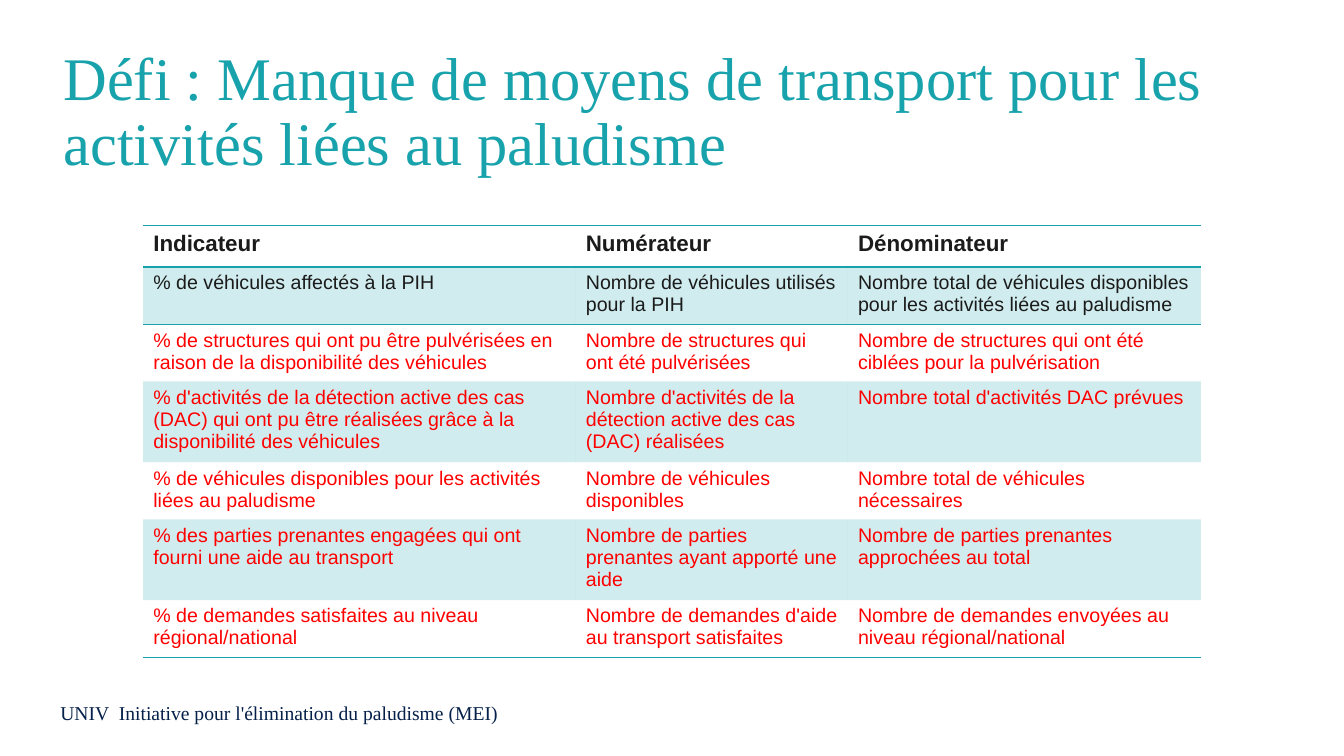
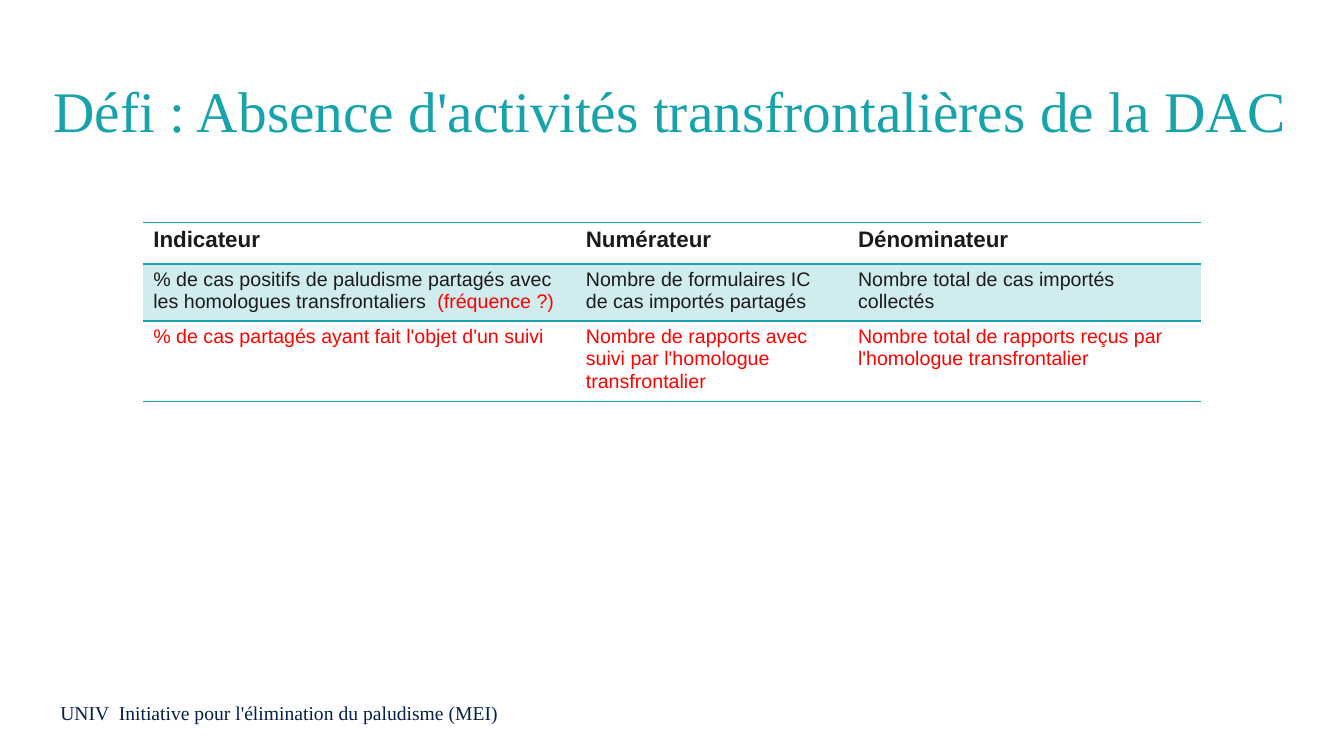
from lxml.etree import SubElement
from pptx import Presentation
from pptx.dml.color import RGBColor
from pptx.enum.text import MSO_ANCHOR, MSO_AUTO_SIZE, PP_ALIGN
from pptx.oxml import parse_xml
from pptx.oxml.ns import nsdecls, qn
from pptx.util import Cm, Pt

# Palette and fonts
TEAL = RGBColor(0x18, 0xA3, 0xAC)
NAVY = RGBColor(0x05, 0x20, 0x49)
INK = RGBColor(0x1B, 0x1B, 0x1B)
RED = RGBColor(0xFF, 0x00, 0x00)
SERIF = "Times New Roman"
SANS = "Arial"

# Shared wording and table grid
FOOTER = "UNIV  Initiative pour l'élimination du paludisme (MEI)"
HEADERS = ("Indicateur", "Numérateur", "Dénominateur")
COL_WIDTHS = (Cm(10.9), Cm(6.86), Cm(8.89))
ROW_HEIGHT = Cm(1.04)
PLAIN_TABLE = "{2D5ABB26-0587-4C30-8999-92F81FD0307C}"

TRANSPORT_ROWS = (
    ("% de véhicules affectés à la PIH",
     "Nombre de véhicules utilisés pour la PIH",
     "Nombre total de véhicules disponibles pour les activités liées au paludisme"),
    ("% de structures qui ont pu être pulvérisées en raison de la disponibilité des véhicules",
     "Nombre de structures qui ont été pulvérisées",
     "Nombre de structures qui ont été ciblées pour la pulvérisation"),
    ("% d'activités de la détection active des cas (DAC) qui ont pu être réalisées "
     "grâce à la disponibilité des véhicules",
     "Nombre d'activités de la détection active des cas (DAC) réalisées",
     "Nombre total d'activités DAC prévues"),
    ("% de véhicules disponibles pour les activités liées au paludisme",
     "Nombre de véhicules disponibles",
     "Nombre total de véhicules nécessaires"),
    ("% des parties prenantes engagées qui ont fourni une aide au transport",
     "Nombre de parties prenantes ayant apporté une aide",
     "Nombre de parties prenantes approchées au total"),
    ("% de demandes satisfaites au niveau régional/national",
     "Nombre de demandes d'aide au transport satisfaites",
     "Nombre de demandes envoyées au niveau régional/national"),
)

# A cell given as a pair ends with a highlighted remark
BORDER_ROWS = (
    (("% de cas positifs de paludisme partagés avec les homologues transfrontaliers ",
      " (fréquence ?)"),
     "Nombre de formulaires IC de cas importés partagés",
     "Nombre total de cas importés collectés"),
    ("% de cas partagés ayant fait l'objet d'un suivi",
     "Nombre de rapports avec suivi par l'homologue transfrontalier",
     "Nombre total de rapports reçus par l'homologue transfrontalier"),
)


def add_text(p, text, size=14, font=SANS, color=INK, bold=False):
    r = p.add_run()
    r.text = text
    r.font.size = Pt(size)
    r.font.name = font
    r.font.color.rgb = color
    r.font.bold = bold


def tint_cell(cell, color, percent):
    cell.fill.solid()
    cell.fill.fore_color.rgb = color
    srgb = cell.fill._xPr.find(".//" + qn("a:srgbClr"))
    SubElement(srgb, qn("a:alpha"), val=str(percent * 1000))


def rule_cell(cell, sides, color=TEAL):
    # Border lines come before the fill in the cell properties
    tc_pr = cell._tc.get_or_add_tcPr()
    for i, side in enumerate(sides):
        tc_pr.insert(i, parse_xml(
            f'<a:ln{side} {nsdecls("a")} w="{Pt(1)}"><a:solidFill>'
            f'<a:srgbClr val="{color}"/></a:solidFill></a:ln{side}>'))


class Deck:
    def __init__(self):
        self.prs = Presentation()
        self.prs.slide_width, self.prs.slide_height = Cm(33.87), Cm(19.05)
        self.layout = self.prs.slide_layouts.get_by_name("Title Only")
        title = self.layout.placeholders[0]
        title.left, title.top = Cm(1.35), Cm(1.02)
        title.width, title.height = Cm(31.62), Cm(3.68)
        self.slide = None

    def new_slide(self):
        self.slide = self.prs.slides.add_slide(self.layout)
        self.footer()

    def footer(self):
        sp = self.slide.shapes.add_textbox(Cm(1.27), Cm(17.53), Cm(13.49), Cm(0.86))
        tf = sp.text_frame
        tf.word_wrap = True
        add_text(tf.paragraphs[0], FOOTER, font=SERIF, color=NAVY)

    def title(self, text, size, side_inset=Cm(0.25)):
        tf = self.slide.shapes.title.text_frame
        tf.auto_size = MSO_AUTO_SIZE.NONE
        tf.vertical_anchor = MSO_ANCHOR.MIDDLE
        tf.margin_left = tf.margin_right = side_inset
        p = tf.paragraphs[0]
        p.alignment = PP_ALIGN.LEFT
        p.line_spacing = 0.9
        add_text(p, text, size=size, font=SERIF, color=TEAL)

    def table(self, rows, top):
        n_rows = len(rows) + 1
        frame = self.slide.shapes.add_table(
            n_rows, len(HEADERS), Cm(3.61), top, sum(COL_WIDTHS), ROW_HEIGHT * n_rows)
        table = frame.table
        table._tbl.tblPr.find(qn("a:tableStyleId")).text = PLAIN_TABLE
        for column, width in zip(table.columns, COL_WIDTHS):
            column.width = width

        # Header between two rules
        for cell, text in zip(table.rows[0].cells, HEADERS):
            add_text(cell.text_frame.paragraphs[0], text, size=16, bold=True)
            cell.fill.background()
            rule_cell(cell, "TB")

        # Body: first row in ink, proposals in red, odd rows tinted
        for i, row in enumerate(rows, start=1):
            for cell, content in zip(table.rows[i].cells, row):
                text, remark = (content, "") if isinstance(content, str) else content
                p = cell.text_frame.paragraphs[0]
                add_text(p, text, color=INK if i == 1 else RED)
                if remark:
                    add_text(p, remark, color=RED)
                if i % 2:
                    tint_cell(cell, TEAL, 20)
                else:
                    cell.fill.background()
                if i == 1:
                    rule_cell(cell, "T")
                if i == len(rows):
                    rule_cell(cell, "B")


def main():
    deck = Deck()

    # Transport
    deck.new_slide()
    deck.title("Défi : Manque de moyens de transport pour les activités liées au paludisme", 43.2)
    deck.table(TRANSPORT_ROWS, top=Cm(5.69))

    # Cross-border activities
    deck.new_slide()
    deck.title("Défi : Absence d'activités transfrontalières de la DAC", 41, side_inset=0)
    deck.table(BORDER_ROWS, top=Cm(5.61))

    deck.prs.save("out.pptx")


if __name__ == "__main__":
    main()
